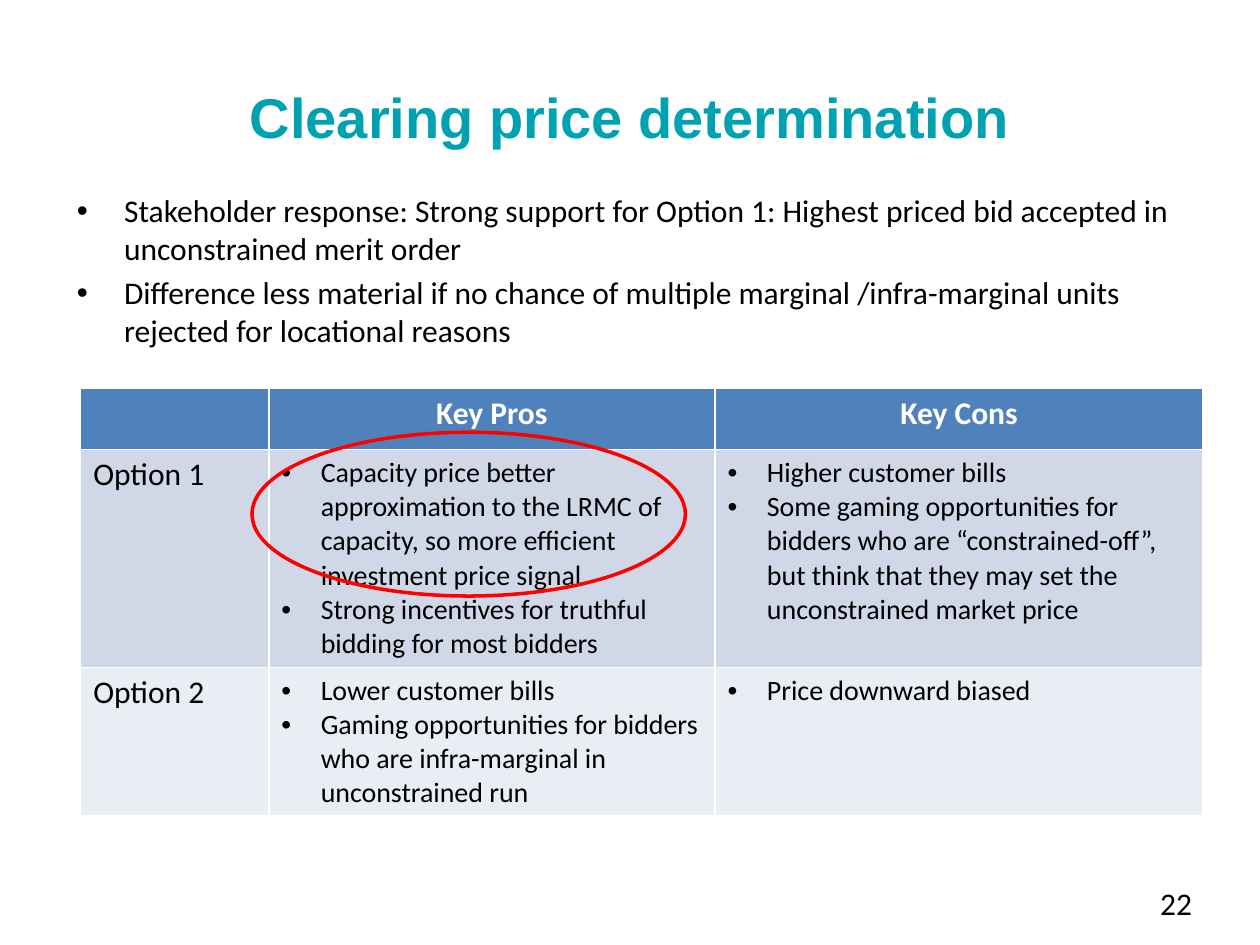
from lxml.etree import SubElement
from pptx import Presentation
from pptx.dml.color import RGBColor
from pptx.enum.shapes import MSO_SHAPE as Shape
from pptx.enum.text import MSO_ANCHOR as Anchor, MSO_AUTO_SIZE as AutoSize, PP_ALIGN as Align
from pptx.oxml.ns import qn
from pptx.util import Pt

TEAL = RGBColor(0x00, 0xA1, 0xB1)
BLACK = RGBColor(0x00, 0x00, 0x00)
WHITE = RGBColor(0xFF, 0xFF, 0xFF)
RED = RGBColor(0xFF, 0x00, 0x00)
HEADER_BLUE = RGBColor(0x4F, 0x81, 0xBD)
ROW_FILLS = [RGBColor(0xD0, 0xD8, 0xE8), RGBColor(0xE9, 0xED, 0xF4)]

POINTS = [
    "Stakeholder response: Strong support for Option 1: Highest priced bid accepted in unconstrained merit order",
    "Difference less material if no chance of multiple marginal /infra-marginal units rejected for locational reasons",
]
HEADERS = ["", "Key Pros", "Key Cons"]
OPTIONS = [
    (
        "Option 1",
        [
            "Capacity price better approximation to the LRMC of capacity, so more efficient investment price signal",
            "Strong incentives for truthful bidding for most bidders",
        ],
        [
            "Higher customer bills",
            "Some gaming opportunities for bidders who are “constrained-off”, "
            "but think that they may set the unconstrained market price",
        ],
    ),
    (
        "Option 2",
        [
            "Lower customer bills",
            "Gaming opportunities for bidders who are infra-marginal in unconstrained run",
        ],
        ["Price downward biased"],
    ),
]
COLUMN_WIDTHS = [107.5, 255, 279]
ROW_HEIGHTS = [35, 124.5, 85]


def place(shape, left, top, width, height):
    """Move and size a shape, in points."""
    shape.left, shape.top = Pt(left), Pt(top)
    shape.width, shape.height = Pt(width), Pt(height)


def add_run(paragraph, text, size, color=BLACK, bold=False, font="Calibri"):
    """Append one formatted run to a paragraph."""
    run = paragraph.add_run()
    run.text = text
    run.font.name, run.font.size, run.font.bold = font, Pt(size), bold
    run.font.color.rgb = color


def add_bullet(paragraph, indent):
    """Give a paragraph a round bullet with a hanging indent."""
    properties = paragraph._p.get_or_add_pPr()
    properties.set("marL", str(Pt(indent)))
    properties.set("indent", str(-Pt(indent)))
    SubElement(properties, qn("a:buFont")).set("typeface", "Arial")
    SubElement(properties, qn("a:buChar")).set("char", "•")


def fill_list(frame, items, size, indent):
    """Write the items as a bulleted list."""
    for index, item in enumerate(items):
        paragraph = frame.add_paragraph() if index else frame.paragraphs[0]
        add_bullet(paragraph, indent)
        add_run(paragraph, item, size)


def fill_title(slide):
    """Write the centred slide title."""
    title = slide.shapes.title
    place(title, 36, 21.6, 648, 90)
    frame = title.text_frame
    frame.vertical_anchor = Anchor.MIDDLE
    paragraph = frame.paragraphs[0]
    paragraph.alignment = Align.CENTER
    add_run(paragraph, "Clearing price determination", 32, TEAL, True, "Arial")


def fill_body(slide):
    """Write the main points into the body placeholder."""
    body = slide.placeholders[1]
    place(body, 36.7, 105.8, 648, 108.7)
    body.text_frame.auto_size = AutoSize.NONE
    fill_list(body.text_frame, POINTS, 18, 27)


def add_options_table(slide):
    """Add the table of pros and cons for each option."""
    frame = slide.shapes.add_table(
        len(ROW_HEIGHTS), len(COLUMN_WIDTHS), Pt(46.1), Pt(221.8),
        Pt(sum(COLUMN_WIDTHS)), Pt(sum(ROW_HEIGHTS)),
    )
    table = frame.table
    for column, width in zip(table.columns, COLUMN_WIDTHS):
        column.width = Pt(width)
    for row, height, fill in zip(table.rows, ROW_HEIGHTS, [HEADER_BLUE, *ROW_FILLS]):
        row.height = Pt(height)
        for cell in row.cells:
            cell.fill.solid()
            cell.fill.fore_color.rgb = fill
    for cell, header in zip(table.rows[0].cells, HEADERS):
        if header:
            paragraph = cell.text_frame.paragraphs[0]
            paragraph.alignment = Align.CENTER
            add_run(paragraph, header, 18, WHITE, True)
    for row_index, (name, pros, cons) in enumerate(OPTIONS, start=1):
        add_run(table.cell(row_index, 0).text_frame.paragraphs[0], name, 18)
        for column_index, items in enumerate((pros, cons), start=1):
            fill_list(table.cell(row_index, column_index).text_frame, items, 16, 22.5)


def add_highlight(slide):
    """Circle the first advantage of option 1."""
    ellipse = slide.shapes.add_shape(Shape.OVAL, Pt(144), Pt(247), Pt(247.7), Pt(93.6))
    ellipse.shadow.inherit = False
    ellipse.fill.background()
    ellipse.line.color.rgb = RED
    ellipse.line.width = Pt(2)


def add_page_number(slide):
    """Add the page number at the lower right."""
    frame = slide.shapes.add_textbox(Pt(620.6), Pt(501.8), Pt(67.7), Pt(29)).text_frame
    frame.word_wrap = True
    paragraph = frame.paragraphs[0]
    paragraph.alignment = Align.RIGHT
    add_run(paragraph, "22", 18)


def main():
    """Build and save the slide."""
    presentation = Presentation()
    presentation.slide_width, presentation.slide_height = Pt(720), Pt(540)
    slide = presentation.slides.add_slide(presentation.slide_layouts[1])
    add_page_number(slide)
    fill_title(slide)
    fill_body(slide)
    add_options_table(slide)
    add_highlight(slide)
    presentation.save("out.pptx")


if __name__ == "__main__":
    main()
